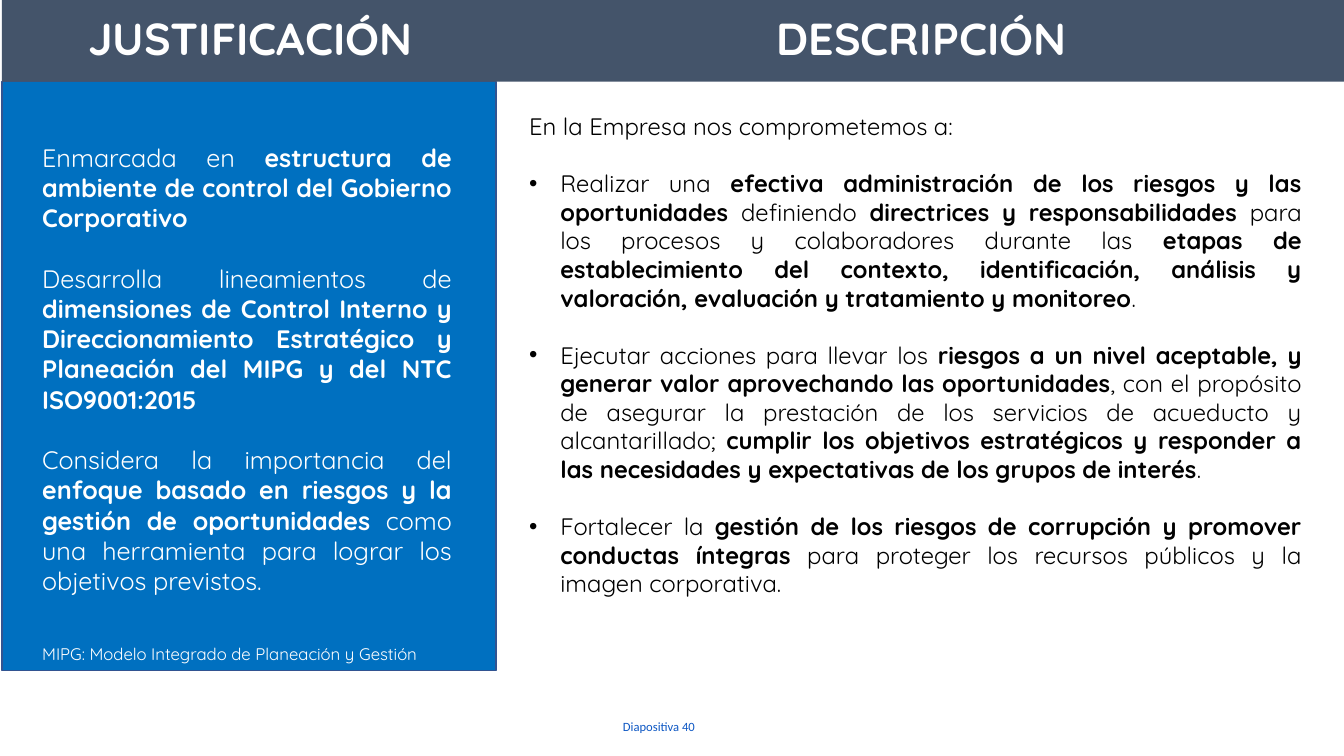
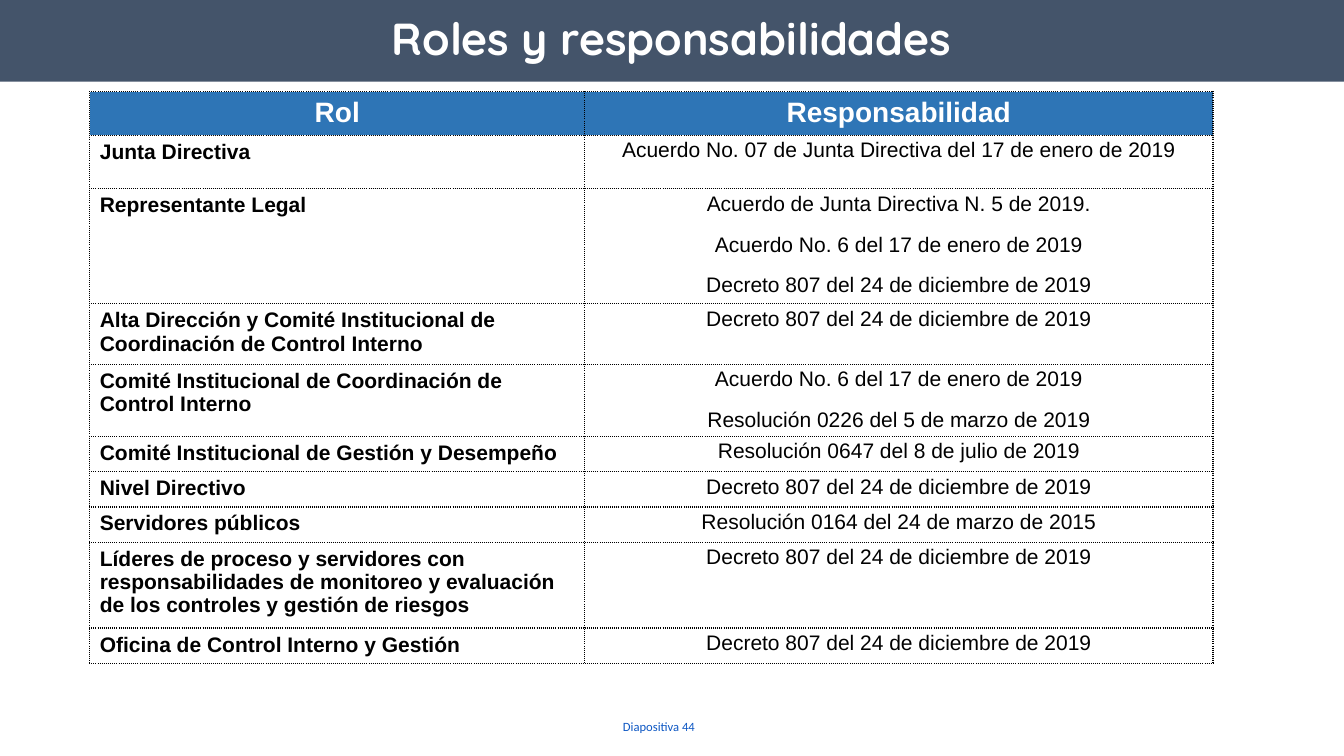
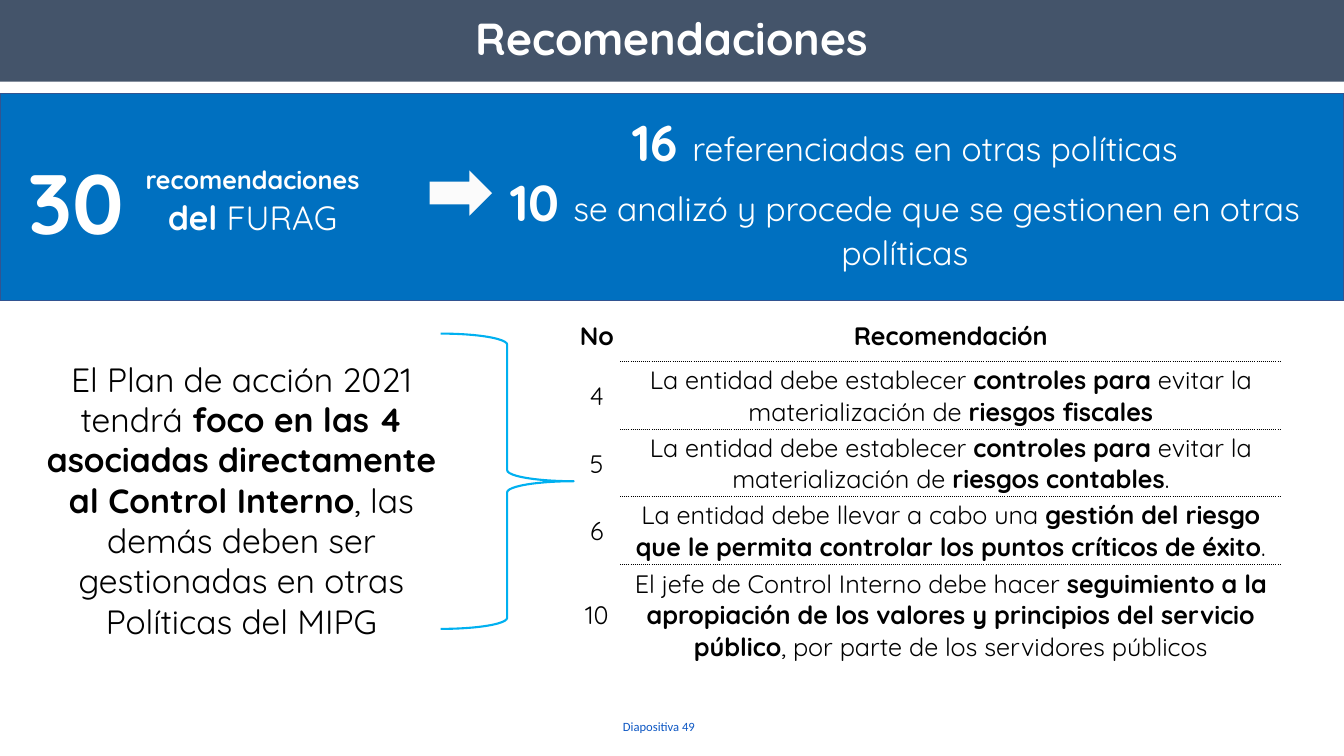
"""Build three slides on risk policy, roles and recommendations."""
import dataclasses

import pptx
import pptx.dml.color
import pptx.enum.shapes
import pptx.enum.text
import pptx.oxml.ns
import pptx.util
from lxml import etree

Inches = pptx.util.Inches
Pt = pptx.util.Pt
Shape = pptx.enum.shapes.MSO_SHAPE
Align = pptx.enum.text.PP_ALIGN
Anchor = pptx.enum.text.MSO_ANCHOR
qn = pptx.oxml.ns.qn


@dataclasses.dataclass(frozen=True)
class Theme:
    """Colours, fonts and type sizes of the deck."""
    band: str = "44546A"
    panel: str = "0070C0"
    panel_edge: str = "325491"
    header: str = "2E75B6"
    brace: str = "00B0F0"
    arrow: str = "FBFBFB"
    footer: str = "0E58C4"
    white: str = "FFFFFF"
    black: str = "000000"
    main_font: str = "Quicksand"
    table_font: str = "Arial"
    footer_font: str = "Calibri"
    title_size: int = 32
    figure_size: int = 60
    count_size: int = 36
    lead_size: int = 24
    head_size: int = 20
    body_size: int = 18
    list_size: int = 17
    cell_size: int = 15
    note_size: int = 12
    footer_size: int = 9


THEME = Theme()


def rgb(code):
    """Turn a hex code into a colour."""
    return pptx.dml.color.RGBColor.from_string(code)


class Deck:
    """Hold the style and the current slide, and add elements to it."""

    def __init__(self, theme):
        """Start an empty widescreen presentation."""
        self.theme = theme
        self.prs = pptx.Presentation()
        self.prs.slide_width = Inches(13.33)
        self.prs.slide_height = Inches(7.5)
        self.slide = None

    def new_slide(self, title, number, left=0):
        """Add a slide with its title band and footer."""
        self.slide = self.prs.slides.add_slide(self.prs.slide_layouts[5])
        self.band(self.slide.shapes.title, title, left, 13.33 - left)
        self.text(5.15, 7.08, 2.77, 0.25, [f"Diapositiva {number}"],
                  self.theme.footer_size, color=self.theme.footer,
                  font=self.theme.footer_font, align=Align.CENTER)

    def band(self, shape, text, left, width):
        """Place and format a shape as a title band."""
        shape.left, shape.top = Inches(left), Inches(0)
        shape.width, shape.height = Inches(width), Inches(0.81)
        shape.fill.solid()
        shape.fill.fore_color.rgb = rgb(self.theme.band)
        frame = shape.text_frame
        frame.auto_size = pptx.enum.text.MSO_AUTO_SIZE.NONE
        frame.word_wrap = True
        frame.vertical_anchor = Anchor.MIDDLE
        frame.margin_left = frame.margin_right = Inches(0.06)
        frame.margin_top = frame.margin_bottom = Inches(0.03)
        self.fill_text(frame, [text], self.theme.title_size, color=self.theme.white,
                       align=Align.CENTER, bold=True, line=0.9)

    def shape(self, kind, left, top, width, height, fill=None, edge=None, weight=1):
        """Add a preset shape without shadow."""
        shape = self.slide.shapes.add_shape(
            kind, Inches(left), Inches(top), Inches(width), Inches(height))
        shape.shadow.inherit = False
        if fill:
            shape.fill.solid()
            shape.fill.fore_color.rgb = rgb(fill)
        else:
            shape.fill.background()
        if edge:
            shape.line.color.rgb = rgb(edge)
            shape.line.width = Pt(weight)
        else:
            shape.line.fill.background()
        return shape

    def panel(self, left, top, width, height):
        """Add a blue panel."""
        self.shape(Shape.RECTANGLE, left, top, width, height,
                   self.theme.panel, self.theme.panel_edge)

    def text(self, left, top, width, height, paragraphs, size, **style):
        """Add a wrapping text box."""
        box = self.slide.shapes.add_textbox(
            Inches(left), Inches(top), Inches(width), Inches(height))
        box.text_frame.word_wrap = True
        self.fill_text(box.text_frame, paragraphs, size, **style)

    def fill_text(self, frame, paragraphs, size, color=None, font=None,
                  align=Align.LEFT, bold=False, line=None, before=0, after=None,
                  bullets_from=None):
        """Add paragraphs; ** marks bold, and (text, size) pairs mix sizes."""
        for index, content in enumerate(paragraphs):
            paragraph = frame.paragraphs[0] if index == 0 else frame.add_paragraph()
            if bullets_from is not None and index >= bullets_from:
                self.bullet(paragraph)
            paragraph.alignment = align
            if line:
                paragraph.line_spacing = line
            if before and index:
                paragraph.space_before = Pt(before)
            if after:
                paragraph.space_after = Pt(after)
            paragraph.font.name = font or self.theme.main_font
            paragraph.font.color.rgb = rgb(color or self.theme.black)
            paragraph.font.bold = bold
            mixed = not isinstance(content, str)
            if not mixed:
                paragraph.font.size = Pt(size)
            for piece, piece_size in content if mixed else [(content, size)]:
                for part, words in enumerate(piece.split("**")):
                    if words:
                        run = paragraph.add_run()
                        run.text = words
                        if part % 2:
                            run.font.bold = True
                        if mixed:
                            run.font.size = Pt(piece_size)

    def bullet(self, paragraph):
        """Give a paragraph a hanging bullet."""
        props = paragraph._p.get_or_add_pPr()
        props.set("marL", str(Inches(0.31)))
        props.set("indent", str(-Inches(0.31)))
        etree.SubElement(props, qn("a:buFont")).set("typeface", "Arial")
        etree.SubElement(props, qn("a:buChar")).set("char", "•")

    def table(self, left, top, widths, heights):
        """Add a plain table with the given column widths and row heights."""
        table = self.slide.shapes.add_table(
            len(heights), len(widths), Inches(left), Inches(top),
            Inches(sum(widths)), Inches(sum(heights))).table
        table.first_row = table.horz_banding = False
        for column, width in zip(table.columns, widths):
            column.width = Inches(width)
        for row, height in zip(table.rows, heights):
            row.height = Inches(height)
        return table

    def cell(self, cell, paragraphs, size, fill=None, dotted="", margins=None,
             anchor=Anchor.TOP, **style):
        """Fill a cell; dotted names the edges (L, R, T, B) with a dotted line."""
        if fill:
            cell.fill.solid()
            cell.fill.fore_color.rgb = rgb(fill)
        else:
            cell.fill.background()
        if margins:
            (cell.margin_left, cell.margin_top,
             cell.margin_right, cell.margin_bottom) = map(Inches, margins)
        cell.vertical_anchor = anchor
        props = cell._tc.get_or_add_tcPr()
        for place, side in enumerate("LRTB"):
            edge = etree.Element(qn(f"a:ln{side}"), w=str(Pt(1)))
            if side in dotted:
                paint = etree.SubElement(edge, qn("a:solidFill"))
                etree.SubElement(paint, qn("a:srgbClr")).set("val", self.theme.black)
                etree.SubElement(edge, qn("a:prstDash")).set("val", "sysDot")
            else:
                etree.SubElement(edge, qn("a:noFill"))
            props.insert(place, edge)
        self.fill_text(cell.text_frame, paragraphs, size, **style)


REASONS = [
    "Enmarcada en **estructura de ambiente de control del Gobierno Corporativo**",
    "Desarrolla lineamientos de **dimensiones de Control Interno y Direccionamiento "
    "Estratégico y Planeación del MIPG y del NTC ISO9001:2015**",
    "Considera la importancia del **enfoque basado en riesgos y la gestión de "
    "oportunidades** como una herramienta para lograr los objetivos previstos.",
]
COMMITMENTS = [
    "En la Empresa nos comprometemos a:",
    "Realizar una **efectiva administración de los riesgos y las oportunidades** "
    "definiendo **directrices y responsabilidades** para los procesos y colaboradores "
    "durante las **etapas de establecimiento del contexto, identificación, análisis y "
    "valoración, evaluación y tratamiento y monitoreo**.",
    "Ejecutar acciones para llevar los **riesgos a un nivel aceptable, y generar valor "
    "aprovechando las oportunidades**, con el propósito de asegurar la prestación de "
    "los servicios de acueducto y alcantarillado; **cumplir los objetivos estratégicos "
    "y responder a las necesidades y expectativas de los grupos de interés**.",
    "Fortalecer la **gestión de los riesgos de corrupción y promover conductas "
    "íntegras** para proteger los recursos públicos y la imagen corporativa.",
]
DECREE = "Decreto 807 del 24 de diciembre de 2019"
AGREEMENT = "Acuerdo No. 6 del 17 de enero de 2019"
ROLES = [
    (0.53, "Junta Directiva",
     ["Acuerdo No. 07 de Junta Directiva del 17 de enero de 2019"]),
    (0.99, "Representante Legal",
     ["Acuerdo de Junta Directiva N. 5 de 2019.", AGREEMENT, DECREE]),
    (0.53, "Alta Dirección y Comité Institucional de Coordinación de Control Interno",
     [DECREE]),
    (0.61, "Comité Institucional de Coordinación de Control Interno",
     [AGREEMENT, "Resolución 0226 del 5 de marzo de 2019"]),
    (0.31, "Comité Institucional de Gestión y Desempeño",
     ["Resolución 0647 del 8 de julio de 2019"]),
    (0.31, "Nivel Directivo", [DECREE]),
    (0.31, "Servidores públicos", ["Resolución 0164 del 24 de marzo de 2015"]),
    (0.76, "Líderes de proceso y servidores con responsabilidades de monitoreo y "
     "evaluación de los controles y gestión de riesgos", [DECREE]),
    (0.31, "Oficina de Control Interno y Gestión", [DECREE]),
]
RECOMMENDATIONS = [
    (0.52, "**No**", "**Recomendación**"),
    (0.67, "4", "La entidad debe establecer **controles para** evitar la "
     "materialización de **riesgos fiscales**"),
    (0.67, "5", "La entidad debe establecer **controles para** evitar la "
     "materialización de **riesgos contables**."),
    (0.67, "6", "La entidad debe llevar a cabo una **gestión del riesgo que le permita "
     "controlar los puntos críticos de éxito**."),
    (1, "10", "El jefe de Control Interno debe hacer **seguimiento a la apropiación de "
     "los valores y principios del servicio público**, por parte de los servidores "
     "públicos"),
]


def policy_slide(deck):
    """Show why the policy exists and what it commits to."""
    theme = deck.theme
    deck.new_slide("DESCRIPCIÓN", 40, left=4.95)
    deck.panel(0.02, 0.81, 4.9, 5.84)
    reason_band = deck.shape(Shape.RECTANGLE, 0.02, 0, 4.93, 0.81)
    deck.band(reason_band, "JUSTIFICACIÓN", 0.02, 4.93)
    deck.text(0.32, 1.36, 4.26, 4.64, REASONS, theme.body_size, color=theme.white,
              align=Align.JUSTIFY, before=1.2 * theme.body_size)
    deck.text(0.32, 6.34, 4.34, 0.3, ["MIPG: Modelo Integrado de Planeación y Gestión"],
              theme.note_size, color=theme.white)
    deck.text(5.15, 1.06, 7.86, 5.25, COMMITMENTS, theme.list_size,
              align=Align.JUSTIFY, before=1.2 * theme.list_size, bullets_from=1)


def roles_slide(deck):
    """List each role with the rule that assigns it."""
    theme = deck.theme
    deck.new_slide("Roles y responsabilidades", 44)
    roles = deck.table(0.89, 0.91, [4.91, 6.23], [0.31] + [row[0] for row in ROLES])
    grid = {"dotted": "LRTB", "font": theme.table_font}
    for column, heading in enumerate(["Rol", "Responsabilidad"]):
        deck.cell(roles.cell(0, column), [heading], theme.head_size, fill=theme.header,
                  color=theme.white, align=Align.CENTER, bold=True, **grid)
    for index, (_, role, rules) in enumerate(ROLES, 1):
        deck.cell(roles.cell(index, 0), [role], theme.cell_size, bold=True, **grid)
        deck.cell(roles.cell(index, 1), rules, theme.cell_size, align=Align.CENTER,
                  margins=(0.1, 0, 0.1, 0), line=1.15, after=10, **grid)


def recommendations_slide(deck):
    """Sum up the recommendations and the four in focus."""
    theme = deck.theme
    deck.new_slide("Recomendaciones", 49)
    deck.panel(0, 0.93, 13.33, 2.05)
    on_panel = {"color": theme.white, "align": Align.CENTER}
    deck.text(0.18, 1.44, 1.15, 1.11, ["30"], theme.figure_size, bold=True, **on_panel)
    deck.text(1.26, 1.5, 2.49, 0.91,
              [[("**recomendaciones**", theme.body_size),
                (" **del** FURAG", theme.lead_size)]], theme.lead_size, **on_panel)
    deck.shape(Shape.RIGHT_ARROW, 4.26, 1.69, 0.62, 0.45, fill=theme.arrow)
    counts = [("16", "referenciadas en otras políticas"),
              ("10", "se analizó y procede que se gestionen en otras políticas")]
    deck.text(4.77, 1.05, 8.41, 1.72,
              [[(f"**{count} **", theme.count_size), (outcome, theme.lead_size)]
               for count, outcome in counts], theme.lead_size, **on_panel)
    deck.text(0.28, 3.51, 4.23, 2.93,
              ["El Plan de acción 2021 tendrá **foco en las 4 asociadas directamente al "
               "Control Interno**, las demás deben ser gestionadas en otras Políticas "
               "del MIPG"], theme.lead_size, align=Align.CENTER)
    deck.shape(Shape.RIGHT_BRACE, 4.37, 3.31, 1.32, 2.93, edge=theme.brace, weight=1.5)
    focus = deck.table(5.69, 3.07, [0.46, 6.56], [row[0] for row in RECOMMENDATIONS])
    last = len(RECOMMENDATIONS) - 1
    for index, (_, number, advice) in enumerate(RECOMMENDATIONS):
        rules = ("T" if index else "") + ("B" if index < last else "")
        for column, (words, dotted) in enumerate([(number, ""), (advice, rules)]):
            deck.cell(focus.cell(index, column), [words], theme.body_size,
                      dotted=dotted, margins=(0.01, 0.01, 0.01, 0),
                      anchor=Anchor.MIDDLE, align=Align.CENTER)


def main():
    """Build and save the deck."""
    deck = Deck(THEME)
    policy_slide(deck)
    roles_slide(deck)
    recommendations_slide(deck)
    deck.prs.save("out.pptx")


if __name__ == "__main__":
    main()
